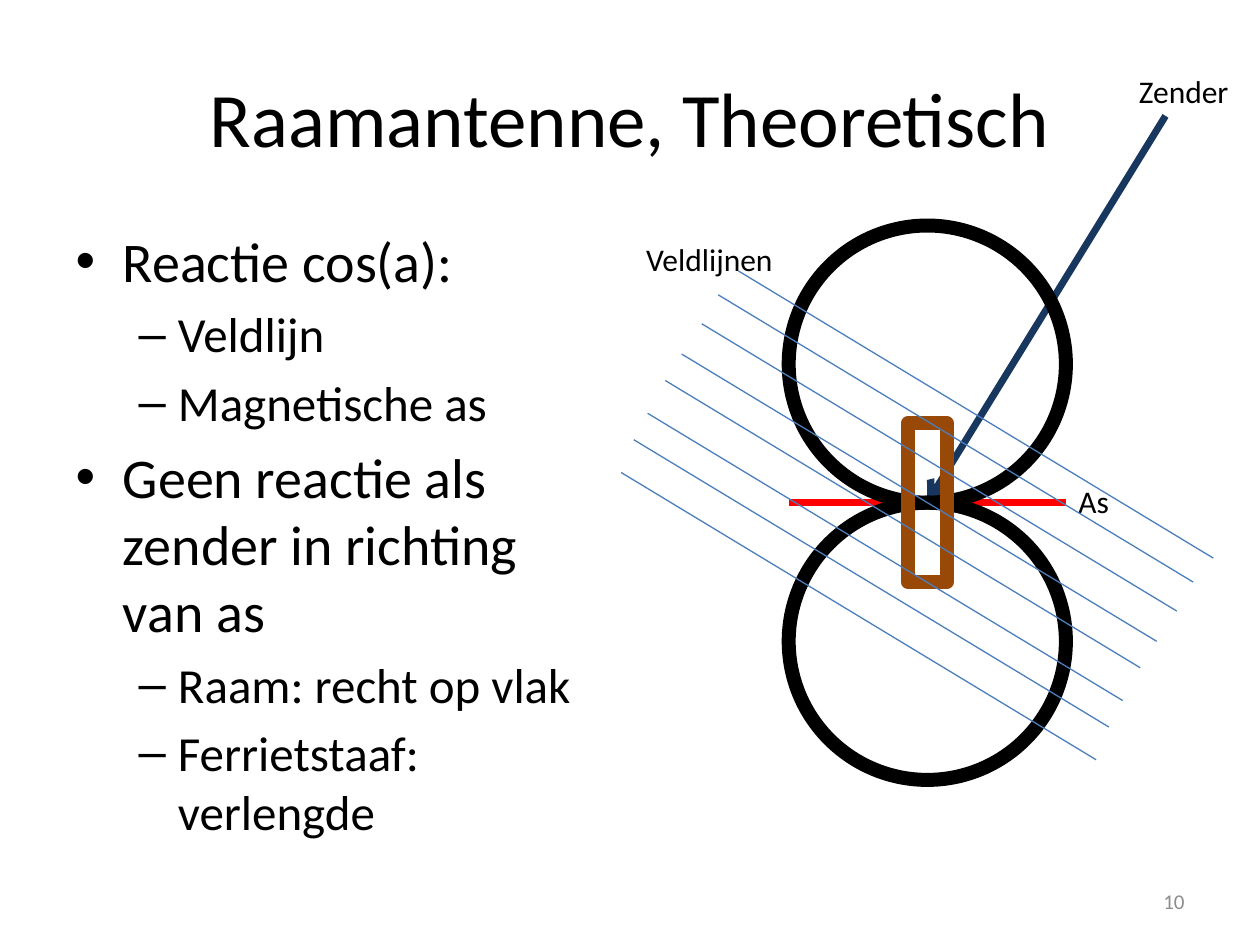
from lxml import etree
from pptx import Presentation
from pptx.dml.color import RGBColor
from pptx.enum.shapes import MSO_CONNECTOR, MSO_SHAPE
from pptx.enum.text import MSO_ANCHOR, MSO_AUTO_SIZE, PP_ALIGN
from pptx.oxml.ns import qn
from pptx.util import Inches, Pt


def color(value):
    return RGBColor.from_string(value)


class SlideBuilder:
    font = "Calibri"
    black = "000000"

    def __init__(self, slide):
        self.slide = slide

    def style(self, p, size, ink=black):
        for r in p.runs:
            r.font.name = self.font
            r.font.size = Pt(size)
            r.font.color.rgb = color(ink)

    def place(self, sp, x, y, w, h):
        sp.left, sp.top, sp.width, sp.height = map(Inches, (x, y, w, h))

    def title(self, text, *box):
        sp = self.slide.shapes.title
        self.place(sp, *box)
        tf = sp.text_frame
        tf.text = text
        tf.vertical_anchor = MSO_ANCHOR.MIDDLE
        tf.paragraphs[0].alignment = PP_ALIGN.CENTER
        self.style(tf.paragraphs[0], 44)

    def bullets(self, items, *box):
        sp = self.slide.placeholders[1]
        self.place(sp, *box)
        tf = sp.text_frame
        tf.auto_size = MSO_AUTO_SIZE.NONE
        tf.text = "\n".join(text for _, text in items)
        for p, (level, _) in zip(tf.paragraphs, items):
            p.level = level
            self.style(p, (32, 28)[level])

    def label(self, text, x, y, w, h=0.4, size=18, ink=black,
              align=PP_ALIGN.LEFT, wrap=False):
        sp = self.slide.shapes.add_textbox(*map(Inches, (x, y, w, h)))
        tf = sp.text_frame
        tf.text = text
        tf.word_wrap = wrap
        if wrap:
            tf.vertical_anchor = MSO_ANCHOR.MIDDLE
        else:
            tf.auto_size = MSO_AUTO_SIZE.SHAPE_TO_FIT_TEXT
        tf.paragraphs[0].alignment = align
        self.style(tf.paragraphs[0], size, ink)

    def outline(self, kind, x, y, w, h, ink=black, width=8):
        sp = self.slide.shapes.add_shape(kind, *map(Inches, (x, y, w, h)))
        sp.shadow.inherit = False
        sp.fill.background()
        sp.line.color.rgb = color(ink)
        sp.line.width = Pt(width)

    def line(self, x1, y1, x2, y2, ink, width, arrow=False):
        sp = self.slide.shapes.add_connector(
            MSO_CONNECTOR.STRAIGHT, *map(Inches, (x1, y1, x2, y2)))
        sp.line.color.rgb = color(ink)
        sp.line.width = Pt(width)
        if arrow:
            ln = sp.line._get_or_add_ln()
            etree.SubElement(ln, qn("a:tailEnd"), type="arrow")
        etree.SubElement(sp._element.spPr, qn("a:effectLst"))


prs = Presentation()
prs.slide_width, prs.slide_height = Inches(10), Inches(7.5)
s = SlideBuilder(prs.slides.add_slide(prs.slide_layouts[1]))

# Title and list
s.title("Raamantenne, Theoretisch", 0.5, 0.3, 9, 1.25)
s.bullets([
    (0, "Reactie cos(a):"),
    (1, "Veldlijn"),
    (1, "Magnetische as"),
    (0, "Geen reactie als zender in richting van as"),
    (1, "Raam: recht op vlak"),
    (1, "Ferrietstaaf: verlengde"),
], 0.5, 1.75, 4.26, 4.95)

# Axis and direction of the transmitter
left, axis_y, diameter = 6.26, 3.99, 2.2
center = left + diameter / 2
s.line(left, axis_y, left + diameter, axis_y, "FF0000", 4)
s.line(9.25, 0.92, center, axis_y, "17375E", 4, arrow=True)
s.label("Zender", 8.94, 0.52, 0.92)

# Figure-eight reception pattern
for top in (axis_y - diameter, axis_y):
    s.outline(MSO_SHAPE.OVAL, left, top, diameter, diameter)

# Loop antenna, centred on the axis
loop_w, loop_h = 0.31, 1.26
s.outline(MSO_SHAPE.RECTANGLE, center - loop_w / 2, axis_y - loop_h / 2,
          loop_w, loop_h, "984807")

s.label("As", 8.46, 3.78, 0.45)
s.label("Veldlijnen", 5.03, 1.86, 1.22)
s.label("10", 7.17, 6.95, 2.33, size=12, ink="8C8C8C",
        align=PP_ALIGN.RIGHT, wrap=True)

# Parallel field lines
run, drop = 3.77, 2.28
for x, y in [(5.86, 2.15), (5.7, 2.34), (5.57, 2.57), (5.41, 2.81),
             (5.28, 3.02), (5.14, 3.28), (5.03, 3.49), (4.93, 3.75)]:
    s.line(x, y, x + run, y + drop, "4B7EBC", 0.75)

prs.save("out.pptx")
